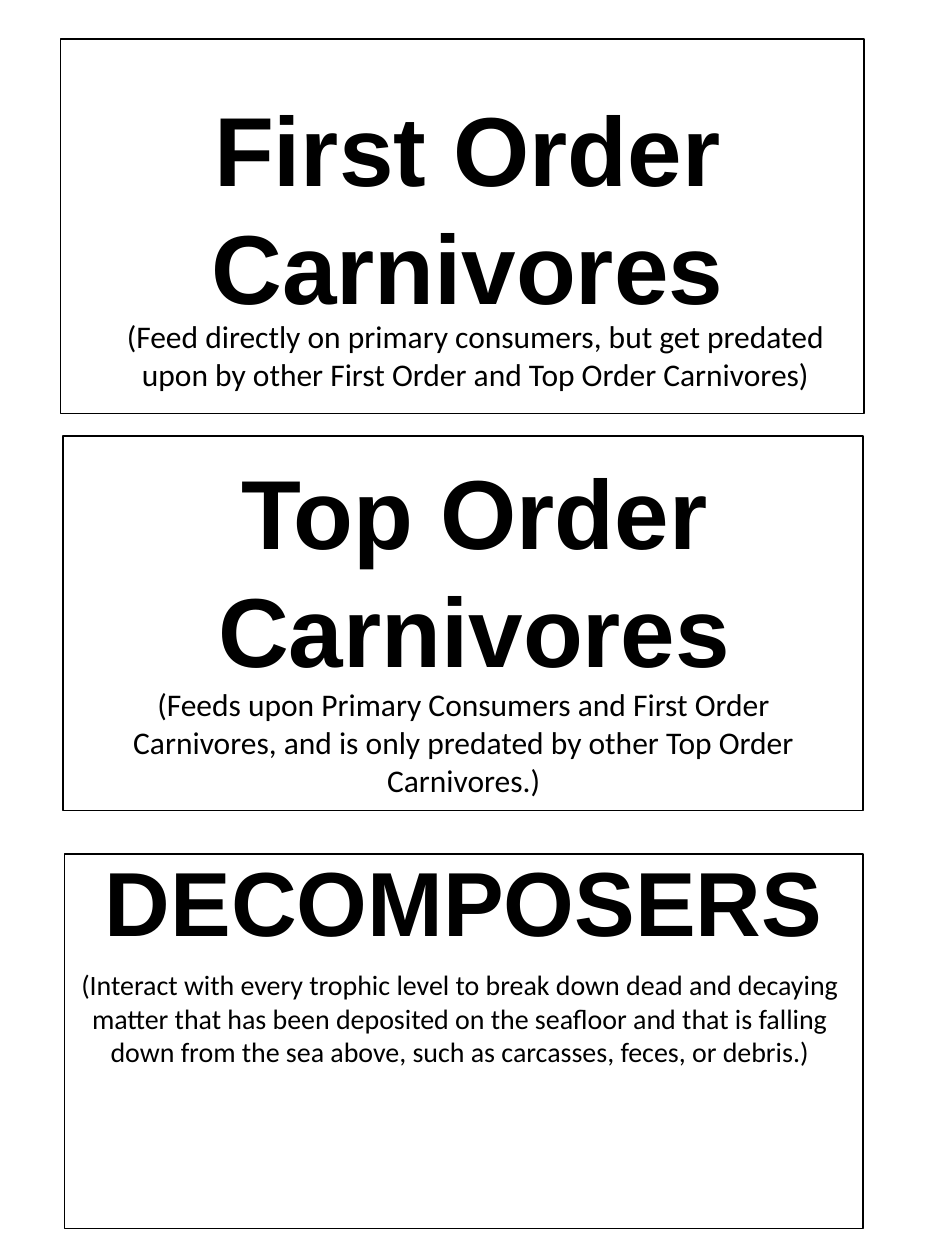
from pptx import Presentation
from pptx.dml.color import RGBColor
from pptx.enum.shapes import MSO_SHAPE as Preset
from pptx.enum.text import MSO_AUTO_SIZE as AutoSize, PP_ALIGN as Align
from pptx.util import Pt

PAGE_WIDTH, PAGE_HEIGHT = 540, 720
BLANK_LAYOUT = 6
CARD_HEIGHT = 214


def color(hex_value):
    return RGBColor.from_string(hex_value)


class TrophicSigns:
    """Style and current slide for the printable trophic level cards."""

    ink = "000000"
    heading = {"name": "Arial", "bold": True}
    description = {"name": "Calibri", "bold": False}

    def __init__(self, slide):
        self.slide = slide

    def frame(self, left, top, width):
        border = self.slide.shapes.add_shape(
            Preset.RECTANGLE, Pt(left), Pt(top), Pt(width), Pt(CARD_HEIGHT))
        border.shadow.inherit = False
        border.fill.background()
        border.line.color.rgb = color(self.ink)
        border.line.width = Pt(1)

    def text(self, wording, box, size, style, line_spacing=None):
        words = self.slide.shapes.add_textbox(*map(Pt, box)).text_frame
        words.word_wrap = True
        words.auto_size = AutoSize.SHAPE_TO_FIT_TEXT
        paragraph = words.paragraphs[0]
        paragraph.text = wording
        paragraph.alignment = Align.CENTER
        if line_spacing:
            paragraph.line_spacing = Pt(line_spacing)
        font = paragraph.runs[0].font
        for attribute, value in style.items():
            setattr(font, attribute, value)
        font.size = Pt(size)
        font.color.rgb = color(self.ink)

    def card(self, frame, title, title_box, title_size, line_spacing,
             note, note_box, note_size):
        self.frame(*frame)
        self.text(title, title_box, title_size, self.heading, line_spacing)
        self.text(note, note_box, note_size, self.description)


CARDS = [
    dict(frame=(34.5, 22.3, 459.3),
         title="First Order Carnivores",
         title_box=(49.7, 46.8, 434.9, 143.3), title_size=56, line_spacing=67.5,
         note="(Feed directly on primary consumers, but get predated upon by "
              "other First Order and Top Order Carnivores)",
         note_box=(49.7, 177.8, 444.2, 51.1), note_size=18),
    dict(frame=(36, 249.1, 457.2),
         title="Top Order Carnivores",
         title_box=(56.9, 254.2, 428.4, 143.3), title_size=56, line_spacing=67.5,
         note="(Feeds upon Primary Consumers and First Order Carnivores, and is "
              "only predated by other Top Order Carnivores.)",
         note_box=(51.1, 388.1, 427.7, 72.7), note_size=18),
    dict(frame=(36.9, 488.1, 456.5),
         title="DECOMPOSERS",
         title_box=(36.7, 478.8, 456.5, 70.6), title_size=52, line_spacing=63.5,
         note="(Interact with every trophic level to break down dead and decaying "
              "matter that has been deposited on the seafloor and that is falling "
              "down from the sea above, such as carcasses, feces, or debris.)",
         note_box=(34.6, 549.4, 456.5, 65.5), note_size=16),
]


def main():
    deck = Presentation()
    deck.slide_width, deck.slide_height = Pt(PAGE_WIDTH), Pt(PAGE_HEIGHT)
    signs = TrophicSigns(deck.slides.add_slide(deck.slide_layouts[BLANK_LAYOUT]))
    for card in CARDS:
        signs.card(**card)
    deck.save("out.pptx")


if __name__ == "__main__":
    main()
